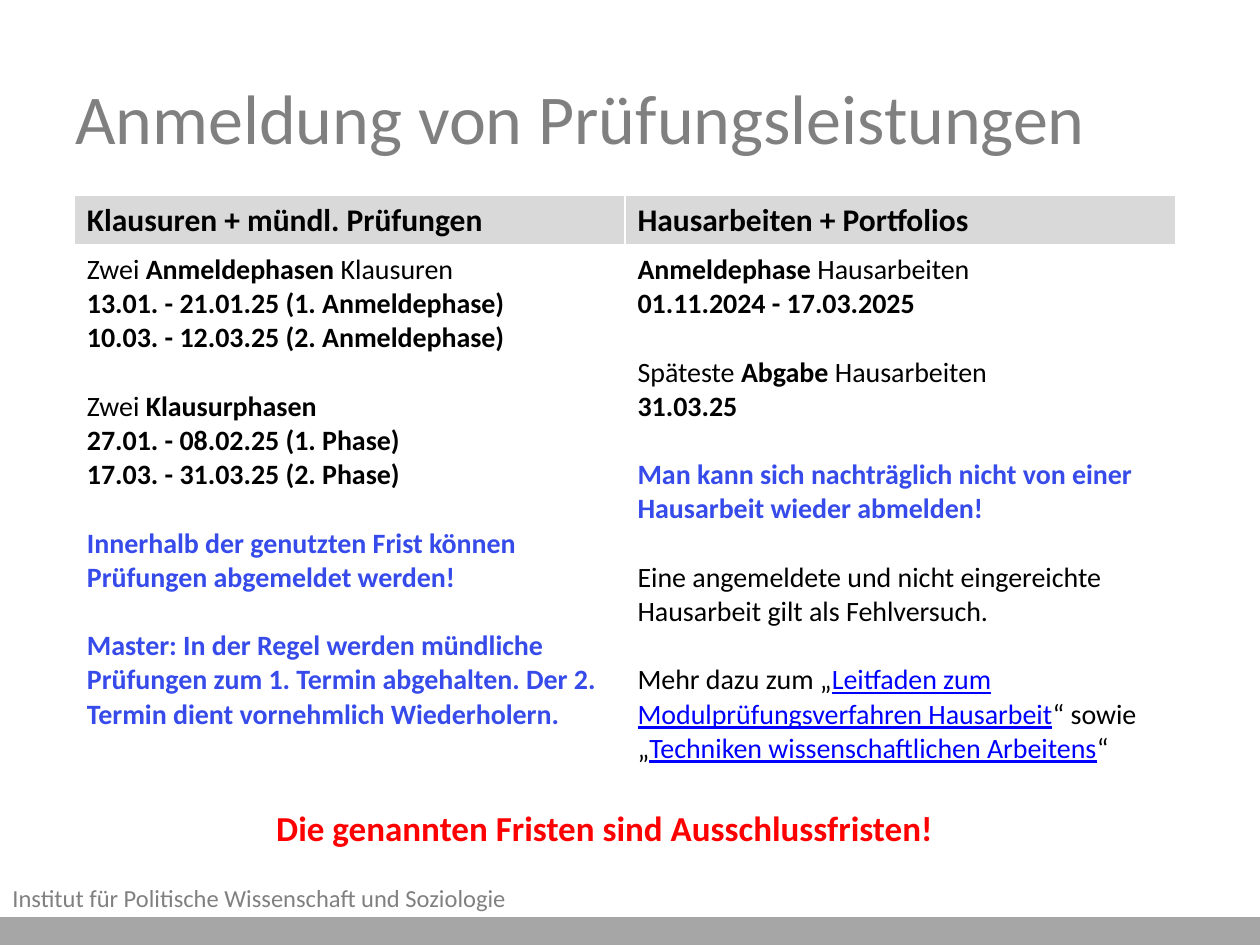
from dataclasses import dataclass

from lxml import etree
from pptx import Presentation
from pptx.dml.color import RGBColor
from pptx.enum.shapes import MSO_SHAPE
from pptx.enum.text import MSO_ANCHOR, PP_ALIGN
from pptx.oxml.ns import qn
from pptx.util import Pt

RECT = MSO_SHAPE.RECTANGLE
TOP, MIDDLE = MSO_ANCHOR.TOP, MSO_ANCHOR.MIDDLE
LEFT, CENTER = PP_ALIGN.LEFT, PP_ALIGN.CENTER
FONT = "Calibri"
BLACK, WHITE, GREY, BLUE, LINK, RED = "000000", "FFFFFF", "808080", "364BEA", "0000FF", "FF0000"
BAND, HEADER = "A6A6A6", "D9D9D9"
BODY_SIZE = 16
LINE_GAP = 19.53


@dataclass(frozen=True)
class Run:
    text: str
    bold: bool = False
    color: str = BLACK
    underline: bool = False


@dataclass(frozen=True)
class Para:
    runs: tuple[Run, ...]
    gap: bool = False


@dataclass(frozen=True)
class Label:
    box: tuple[float, float, float, float]
    run: Run
    size: float
    align: PP_ALIGN = LEFT
    anchor: MSO_ANCHOR = TOP


@dataclass(frozen=True)
class Column:
    header: str
    paras: tuple[Para, ...]


def rgb(value: str) -> RGBColor:
    return RGBColor.from_string(value)


def para(*runs: Run, gap: bool = False) -> Para:
    return Para(runs, gap)


def bold(text: str, color: str = BLACK) -> Run:
    return Run(text, True, color)


def link(text: str) -> Run:
    return Run(text, color=LINK, underline=True)


LABELS = (
    Label((0, 501.1, 510.5, 24.5),
          Run("Institut für Politische Wissenschaft und Soziologie", color=GREY), 14),
    Label((36, 21.6, 648, 90), Run("Anmeldung von Prüfungsleistungen", color=GREY), 40,
          anchor=MIDDLE),
    Label((127.4, 457.2, 436.3, 31.7),
          bold("Die genannten Fristen sind Ausschlussfristen!", RED), 20, CENTER),
)

COLUMNS = (
    Column("Klausuren + mündl. Prüfungen", (
        para(Run("Zwei "), bold("Anmeldephasen "), Run("Klausuren")),
        para(bold("13.01. - 21.01.25 (1. Anmeldephase)")),
        para(bold("10.03. - 12.03.25 (2. Anmeldephase)")),
        para(Run("Zwei "), bold("Klausurphasen"), gap=True),
        para(bold("27.01. - 08.02.25 (1. Phase)")),
        para(bold("17.03. - 31.03.25 (2. Phase)")),
        para(bold("Innerhalb der genutzten Frist können Prüfungen abgemeldet werden!", BLUE),
             gap=True),
        para(bold("Master: In der Regel werden mündliche Prüfungen zum 1. Termin abgehalten. "
                  "Der 2. Termin dient vornehmlich Wiederholern.", BLUE), gap=True),
    )),
    Column("Hausarbeiten + Portfolios", (
        para(bold("Anmeldephase"), Run(" Hausarbeiten")),
        para(bold("01.11.2024 - 17.03.2025")),
        para(Run("Späteste "), bold("Abgabe"), Run(" Hausarbeiten"), gap=True),
        para(bold("31.03.25")),
        para(bold("Man kann sich nachträglich nicht von einer Hausarbeit wieder abmelden!", BLUE),
             gap=True),
        para(Run("Eine angemeldete und nicht eingereichte Hausarbeit gilt als Fehlversuch."),
             gap=True),
        para(Run("Mehr dazu zum „"), link("Leitfaden zum Modulprüfungsverfahren Hausarbeit"),
             Run("“ sowie „"), link("Techniken wissenschaftlichen Arbeitens"), Run("“"), gap=True),
    )),
)


def write(tf, paras: tuple[Para, ...], size: float, align: PP_ALIGN = LEFT) -> None:
    for i, item in enumerate(paras):
        p = tf.add_paragraph() if i else tf.paragraphs[0]
        p.alignment = align
        p.space_before = Pt(LINE_GAP if item.gap else 0)
        for part in item.runs:
            r = p.add_run()
            r.text = part.text
            formats = {"name": FONT, "size": Pt(size), "bold": part.bold,
                       "underline": part.underline}
            for name, value in formats.items():
                setattr(r.font, name, value)
            r.font.color.rgb = rgb(part.color)


def add_label(s, label: Label) -> None:
    tf = s.shapes.add_textbox(*map(Pt, label.box)).text_frame
    tf.word_wrap = True
    tf.vertical_anchor = label.anchor
    write(tf, (para(label.run),), label.size, label.align)


def add_borders(cell, bottom: float) -> None:
    tcPr = cell._tc.get_or_add_tcPr()
    for side, width in {"L": 1, "R": 1, "T": 1, "B": bottom}.items():
        ln = etree.SubElement(tcPr, qn(f"a:ln{side}"), w=str(Pt(width)))
        fill = etree.SubElement(ln, qn("a:solidFill"))
        etree.SubElement(fill, qn("a:srgbClr"), val=WHITE)


def add_deadlines(s, columns: tuple[Column, ...]) -> None:
    box = (42.5, 111.6, 629.3, 345.6)
    table = s.shapes.add_table(2, len(columns), *map(Pt, box)).table
    table.horz_banding = False
    for row, height in zip(table.rows, (25.2, 320.4)):
        row.height = Pt(height)
    for i, column in enumerate(columns):
        head, body = table.cell(0, i), table.cell(1, i)
        add_borders(head, 3)
        head.fill.solid()
        head.fill.fore_color.rgb = rgb(HEADER)
        write(head.text_frame, (para(bold(column.header)),), 18)
        add_borders(body, 1)
        body.fill.background()
        write(body.text_frame, column.paras, BODY_SIZE)


def add_band(s) -> None:
    sp = s.shapes.add_shape(RECT, Pt(0), Pt(525), Pt(720), Pt(15))
    sp.shadow.inherit = False
    sp.fill.solid()
    sp.fill.fore_color.rgb = rgb(BAND)
    sp.line.color.rgb = rgb(BAND)
    sp.line.width = Pt(2)


def main() -> None:
    prs = Presentation()
    prs.slide_width, prs.slide_height = Pt(720), Pt(540)
    s = prs.slides.add_slide(prs.slide_layouts[6])
    add_band(s)
    add_deadlines(s, COLUMNS)
    for label in LABELS:
        add_label(s, label)
    prs.save("out.pptx")


if __name__ == "__main__":
    main()
